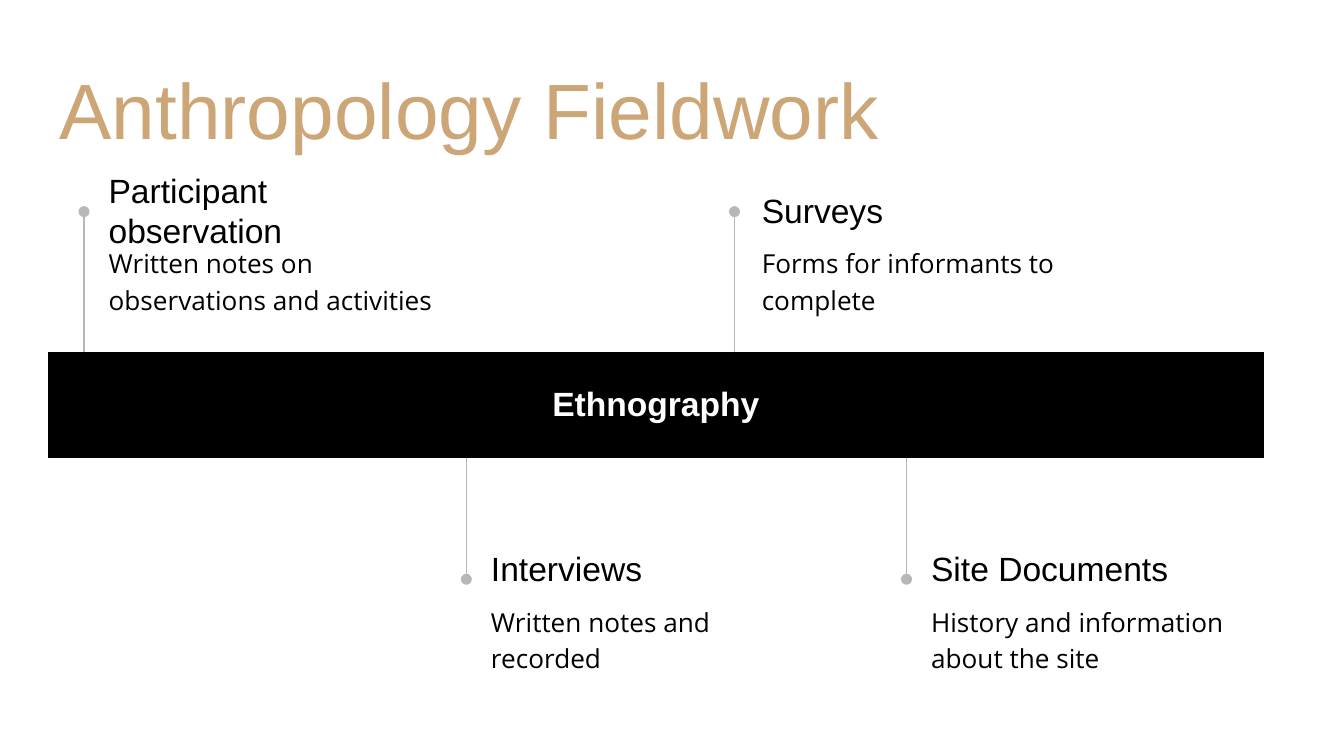
"""Build the Anthropology Fieldwork slide: an ethnography band with four labelled methods."""
from lxml.etree import SubElement
from pptx import Presentation
from pptx.dml.color import RGBColor
from pptx.enum.shapes import MSO_CONNECTOR
from pptx.enum.text import MSO_ANCHOR, PP_ALIGN
from pptx.oxml.ns import qn
from pptx.util import Pt

PX = 4572
INSET = 20 * PX
BAND_TOP, BAND_HEIGHT = 524, 157
BLACK, WHITE, TAN, GREY = "000000", "FFFFFF", "CCA677", "B7B7B7"


def add_run(paragraph, text, size, font, color, bold=False):
    run = paragraph.add_run()
    run.text = text
    run.font.size = Pt(size)
    run.font.name = font
    run.font.bold = bold
    run.font.color.rgb = RGBColor.from_string(color)


def add_text(left, top, width, height, text, size, font, color, anchor):
    frame = slide.shapes.add_textbox(left * PX, top * PX, width * PX, height * PX).text_frame
    frame.word_wrap = True
    frame.vertical_anchor = anchor
    frame.margin_left = frame.margin_right = frame.margin_top = frame.margin_bottom = INSET
    add_run(frame.paragraphs[0], text, size, font, color)
    return frame.paragraphs[0]


presentation = Presentation()
presentation.slide_width = 2000 * PX
presentation.slide_height = 1125 * PX
slide = presentation.slides.add_slide(presentation.slide_layouts[6])

add_text(69, 69, 1864, 182, "Anthropology Fieldwork", 42, "Arial", TAN, MSO_ANCHOR.BOTTOM)

column_widths = [226] + [156] * 6 + [648]
band = slide.shapes.add_table(
    1, len(column_widths), 71 * PX, BAND_TOP * PX, sum(column_widths) * PX, BAND_HEIGHT * PX
).table
band._tbl.tblPr.find(qn("a:tableStyleId")).text = "{2D5ABB26-0587-4C30-8999-92F81FD0307C}"
for column, width in zip(band.columns, column_widths):
    column.width = width * PX
for cell in band.rows[0].cells:
    cell.fill.solid()
    cell.fill.fore_color.rgb = RGBColor.from_string(BLACK)
label = band.cell(0, 0)
label.merge(band.cell(0, len(column_widths) - 1))
label.vertical_anchor = MSO_ANCHOR.MIDDLE
label.margin_left = label.margin_right = label.margin_top = label.margin_bottom = INSET
label_paragraph = label.text_frame.paragraphs[0]
label_paragraph.alignment = PP_ALIGN.CENTER
add_run(label_paragraph, "Ethnography", 18, "Arial", WHITE, bold=True)

above = (BAND_TOP, 315, 270)
below = (BAND_TOP + BAND_HEIGHT, 862, 803)
methods = [
    (125, 142, 506, 570, above, 0, "Participant observation", "Written notes on observations and activities"),
    (694, 711, 506, 506, below, 16, "Interviews", "Written notes and recorded"),
    (1093, 1114, 514, 514, above, 16, "Surveys", "Forms for informants to complete"),
    (1349, 1366, 514, 514, below, 16, "Site Documents", "History and information about the site"),
]
for stem, left, heading_width, body_width, side, space_after, heading, body in methods:
    line_start, line_end, top = side
    connector = slide.shapes.add_connector(
        MSO_CONNECTOR.STRAIGHT, stem * PX, line_start * PX, stem * PX, line_end * PX
    )
    connector.line.color.rgb = RGBColor.from_string(GREY)
    connector.line.width = Pt(0.75)
    SubElement(connector.line._get_or_add_ln(), qn("a:tailEnd"), type="oval")
    SubElement(connector._element.spPr, qn("a:effectLst"))

    add_text(left, top, heading_width, 86, heading, 18, "Arial", BLACK, MSO_ANCHOR.MIDDLE)
    paragraph = add_text(left, top + 72, body_width, 126, body, 14, "Open Sans", BLACK, MSO_ANCHOR.TOP)
    paragraph.line_spacing = 1.15
    paragraph.space_after = Pt(space_after)

presentation.save("out.pptx")
